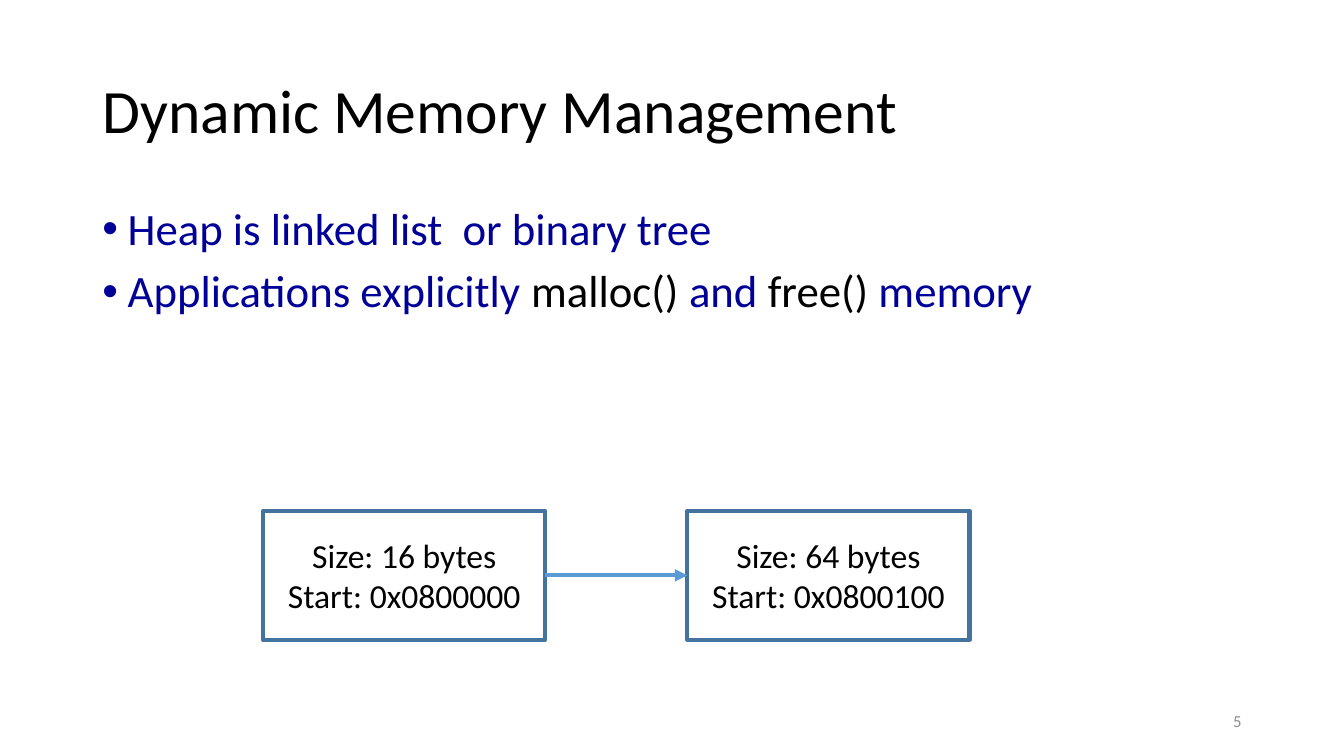
from lxml.etree import SubElement
from pptx import Presentation
from pptx.dml.color import RGBColor
from pptx.enum.shapes import MSO_CONNECTOR, MSO_SHAPE
from pptx.enum.text import MSO_ANCHOR, MSO_AUTO_SIZE, PP_ALIGN
from pptx.oxml.ns import qn
from pptx.util import Pt

BLACK = RGBColor(0x00, 0x00, 0x00)
NAVY = RGBColor(0x00, 0x00, 0x99)
GRAY = RGBColor(0x8C, 0x8C, 0x8C)
BLOCK_EDGE = RGBColor(0x43, 0x73, 0x9E)
LINK_BLUE = RGBColor(0x5B, 0x9B, 0xD5)
FONT = "Calibri"

TITLE = "Dynamic Memory Management"
BULLETS = [
    [("Heap is linked list  or binary tree", NAVY)],
    [
        ("Applications explicitly ", NAVY),
        ("malloc() ", BLACK),
        ("and ", NAVY),
        ("free() ", BLACK),
        ("memory", NAVY),
    ],
]
HEAP_BLOCKS = [
    ["Size: 16 bytes", "Start: 0x0800000"],
    ["Size: 64 bytes", "Start: 0x0800100"],
]
PAGE_NUMBER = "5"

SLIDE_W, SLIDE_H = 960, 540
MARGIN = 66
CONTENT_W = SLIDE_W - 2 * MARGIN
BLOCK_LEFT, BLOCK_TOP = 188, 365
BLOCK_W, BLOCK_H = 201.6, 92
BLOCK_GAP = 101.4
LINE_WIDTH = 3


def place(shape, left, top, width, height):
    shape.left, shape.top = Pt(left), Pt(top)
    shape.width, shape.height = Pt(width), Pt(height)


def write(shape, paragraphs, size, align, anchor, line_spacing=1.0):
    """Fill a shape with paragraphs, each a list of (text, colour) runs."""
    frame = shape.text_frame
    frame.word_wrap = True
    frame.auto_size = MSO_AUTO_SIZE.NONE
    frame.vertical_anchor = anchor
    for index, runs in enumerate(paragraphs):
        paragraph = frame.paragraphs[0] if index == 0 else frame.add_paragraph()
        paragraph.alignment = align
        paragraph.line_spacing = line_spacing
        paragraph.space_before = Pt(0)
        for text, color in runs:
            run = paragraph.add_run()
            run.text = text
            run.font.name = FONT
            run.font.size = Pt(size)
            run.font.color.rgb = color


def add_bullet(paragraph, indent=18):
    paragraph.space_before = Pt(10)
    properties = paragraph._p.get_or_add_pPr()
    properties.set("marL", str(Pt(indent)))
    properties.set("indent", str(-Pt(indent)))
    SubElement(properties, qn("a:buFont"), typeface="Arial")
    SubElement(properties, qn("a:buChar"), char="•")


def add_heap_block(slide, lines, left):
    block = slide.shapes.add_shape(
        MSO_SHAPE.RECTANGLE, Pt(left), Pt(BLOCK_TOP), Pt(BLOCK_W), Pt(BLOCK_H))
    block.shadow.inherit = False
    block.fill.background()
    block.line.color.rgb = BLOCK_EDGE
    block.line.width = Pt(LINE_WIDTH)
    write(block, [[(line, BLACK)] for line in lines], 24,
          PP_ALIGN.CENTER, MSO_ANCHOR.MIDDLE)
    return block


def link_blocks(slide, source, target):
    link = slide.shapes.add_connector(MSO_CONNECTOR.STRAIGHT, 0, 0, 0, 0)
    link.begin_connect(source, 3)
    link.end_connect(target, 1)
    link.line.color.rgb = LINK_BLUE
    link.line.width = Pt(LINE_WIDTH)
    SubElement(link.line._get_or_add_ln(), qn("a:tailEnd"), type="triangle")
    SubElement(link._element.spPr, qn("a:effectLst"))


def main():
    deck = Presentation()
    deck.slide_width, deck.slide_height = Pt(SLIDE_W), Pt(SLIDE_H)
    slide = deck.slides.add_slide(deck.slide_layouts[1])

    title = slide.shapes.title
    place(title, MARGIN, 28.8, CONTENT_W, 104.4)
    write(title, [[(TITLE, BLACK)]], 44, PP_ALIGN.LEFT, MSO_ANCHOR.MIDDLE, 0.9)

    body = slide.placeholders[1]
    place(body, MARGIN, 144, CONTENT_W, 342.7)
    write(body, BULLETS, 32, PP_ALIGN.LEFT, MSO_ANCHOR.TOP, 0.9)
    for paragraph in body.text_frame.paragraphs:
        add_bullet(paragraph)

    number_w = 216
    page_number = slide.shapes.add_textbox(
        Pt(SLIDE_W - MARGIN - number_w), Pt(500.5), Pt(number_w), Pt(28.8))
    write(page_number, [[(PAGE_NUMBER, GRAY)]], 12,
          PP_ALIGN.RIGHT, MSO_ANCHOR.MIDDLE)

    blocks = [
        add_heap_block(slide, lines, BLOCK_LEFT + i * (BLOCK_W + BLOCK_GAP))
        for i, lines in enumerate(HEAP_BLOCKS)
    ]
    for source, target in zip(blocks, blocks[1:]):
        link_blocks(slide, source, target)

    deck.save("out.pptx")


if __name__ == "__main__":
    main()
